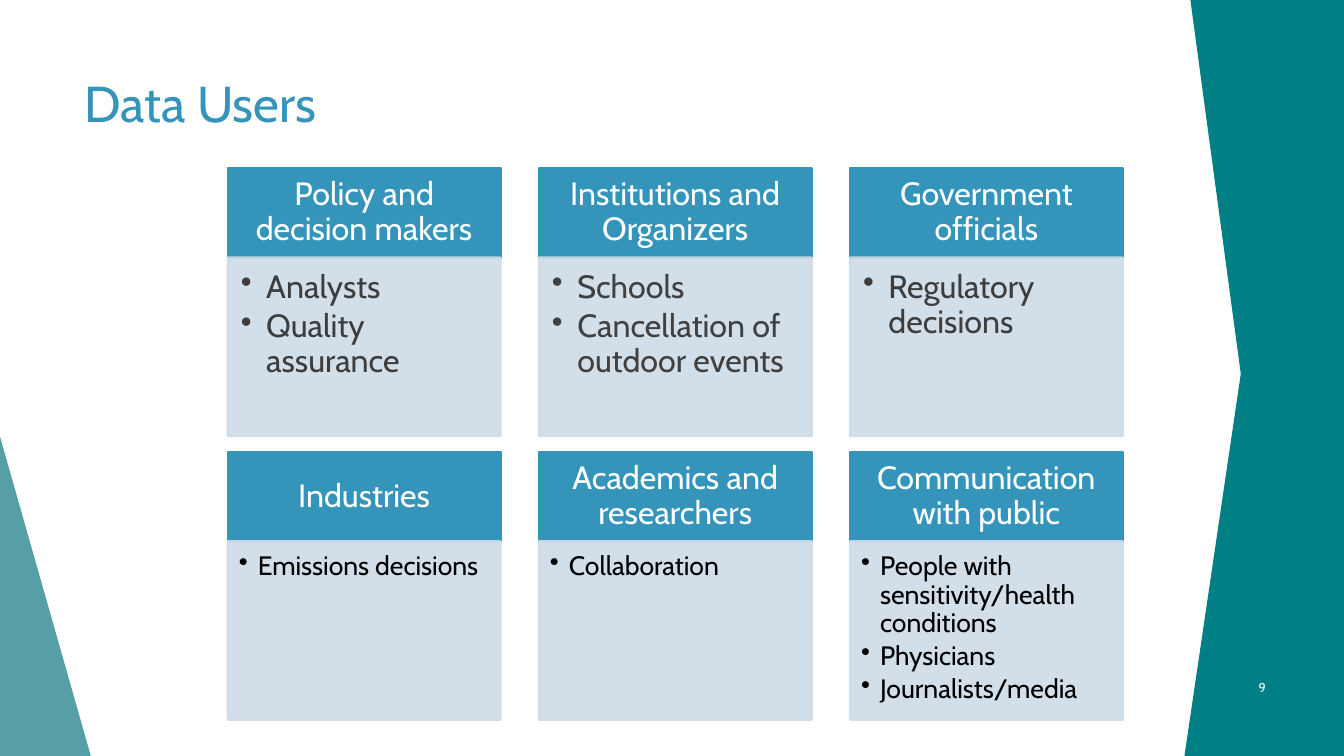
from lxml import etree
from pptx import Presentation
from pptx import util as u
from pptx.dml.color import RGBColor
from pptx.enum import shapes, text
from pptx.oxml.ns import qn

TITLE = "Data Users"
PAGE_NUMBER = "9"
FONT = "Cabin"
COLORS = {"blue": "3494BA", "pale": "CEDCE7", "teal": "008085", "sea": "3A8F98",
          "white": "FFFFFF", "charcoal": "3D3D3D", "gray": "404040", "black": "000000"}

# Each card: heading, list items, list color
CARD_ROWS = [
    [("Policy and decision makers", ["Analysts", "Quality assurance"], "charcoal"),
     ("Institutions and Organizers", ["Schools", "Cancellation of outdoor events"], "gray"),
     ("Government officials", ["Regulatory decisions"], "charcoal")],
    [("Industries", ["Emissions decisions"], "black"),
     ("Academics and researchers", ["Collaboration"], "black"),
     ("Communication with public",
      ["People with sensitivity/health conditions", "Physicians", "Journalists/media"],
      "black")],
]
# List style of each row: text size in points, indent and insets (l, t, r, b) in cm
LIST_STYLES = [
    {"size": 23, "indent": 0.64, "insets": (0.33, 0.33, 0.46, 0.51)},
    {"size": 19, "indent": 0.48, "insets": (0.28, 0.28, 0.38, 0.43)},
]
HEAD_SIZE, HEAD_INSETS = 23, (0.46, 0.25, 0.46, 0.25)

# Corner points in cm
RIGHT_BAND = [(30, 0), (33.87, 0), (33.87, 19.05), (29.85, 19.05), (31.27, 9.42)]
LEFT_WEDGE = [(0, 11), (2.29, 19.05), (0, 19.05)]

GRID_LEFT, GRID_TOP = 5.74, 4.24
COLUMN_STEP, ROW_STEP = 7.84, 7.15
CARD_WIDTH, HEAD_HEIGHT, LIST_HEIGHT = 6.88, 2.25, 4.5


def rgb(name):
    return RGBColor.from_string(COLORS[name])


def paint(shape, color, opacity=100, line_width=None):
    """Give fill and outline one color and opacity (percent)."""
    shape.shadow.inherit = False
    shape.fill.solid()
    shape.fill.fore_color.rgb = rgb(color)
    if line_width:
        shape.line.width = u.Pt(line_width)
        shape.line.color.rgb = rgb(color)
    else:
        shape.line.fill.background()
    if opacity < 100:
        for tint in shape.element.spPr.iter(qn("a:srgbClr")):
            etree.SubElement(tint, qn("a:alpha"), val=str(opacity * 1000))


def add_polygon(page, corners, color, opacity=100):
    points = [(u.Cm(x), u.Cm(y)) for x, y in corners]
    builder = page.shapes.build_freeform(*points[0])
    builder.add_line_segments(points[1:], close=True)
    paint(builder.convert_to_shape(), color, opacity)


def add_span(para, words, size, color):
    span = para.add_run()
    span.text = words
    span.font.size = u.Pt(size)
    span.font.name = FONT
    span.font.color.rgb = rgb(color)


def add_panel(page, left, top, height, insets):
    """Add a rectangle as wide as a card, with its text insets set."""
    panel = page.shapes.add_shape(shapes.MSO_SHAPE.RECTANGLE, u.Cm(left), u.Cm(top),
                                  u.Cm(CARD_WIDTH), u.Cm(height))
    frame = panel.text_frame
    frame.word_wrap = True
    frame.margin_left, frame.margin_top, frame.margin_right, frame.margin_bottom = (
        u.Cm(inset) for inset in insets)
    return panel


def add_bullet(para, indent):
    settings = para._p.get_or_add_pPr()
    settings.set("marL", str(u.Cm(indent)))
    settings.set("indent", str(-u.Cm(indent)))
    etree.SubElement(settings, qn("a:buChar"), char="•")


def add_card(page, left, top, card, style):
    heading, items, color = card
    head = add_panel(page, left, top, HEAD_HEIGHT, HEAD_INSETS)
    paint(head, "blue", line_width=1.5)
    head.text_frame.vertical_anchor = text.MSO_ANCHOR.MIDDLE
    para = head.text_frame.paragraphs[0]
    para.alignment = text.PP_ALIGN.CENTER
    para.line_spacing = 0.9
    add_span(para, heading, HEAD_SIZE, "white")

    body = add_panel(page, left, top + HEAD_HEIGHT, LIST_HEIGHT, style["insets"])
    paint(body, "pale", 90, 1.5)
    frame = body.text_frame
    frame.vertical_anchor = text.MSO_ANCHOR.TOP
    for number, item in enumerate(items):
        para = frame.add_paragraph() if number else frame.paragraphs[0]
        add_bullet(para, style["indent"])
        para.alignment = text.PP_ALIGN.LEFT
        para.line_spacing = 0.9
        para.space_after = u.Pt(round(style["size"] * 0.15, 1))
        add_span(para, item, style["size"], color)


def add_title(page):
    title = page.shapes.title
    title.left, title.top, title.width, title.height = (
        u.Cm(1.88), u.Cm(1.7), u.Cm(30.28), u.Cm(3.66))
    title.text_frame.vertical_anchor = text.MSO_ANCHOR.TOP
    para = title.text_frame.paragraphs[0]
    para.alignment = text.PP_ALIGN.LEFT
    add_span(para, TITLE, 36, "blue")


def add_page_number(page):
    box = page.shapes.add_textbox(u.Cm(30.25), u.Cm(16.81), u.Cm(1.9), u.Cm(1.02))
    box.text_frame.word_wrap = True
    box.text_frame.vertical_anchor = text.MSO_ANCHOR.MIDDLE
    para = box.text_frame.paragraphs[0]
    para.alignment = text.PP_ALIGN.RIGHT
    add_span(para, PAGE_NUMBER, 9, "white")


def main():
    deck = Presentation()
    deck.slide_width, deck.slide_height = u.Cm(33.87), u.Cm(19.05)
    page = deck.slides.add_slide(deck.slide_layouts[5])
    add_polygon(page, LEFT_WEDGE, "sea", 85)
    add_polygon(page, RIGHT_BAND, "teal")
    add_title(page)
    add_page_number(page)
    for row, (cards, style) in enumerate(zip(CARD_ROWS, LIST_STYLES)):
        for column, card in enumerate(cards):
            add_card(page, GRID_LEFT + column * COLUMN_STEP,
                     GRID_TOP + row * ROW_STEP, card, style)
    deck.save("out.pptx")


if __name__ == "__main__":
    main()
